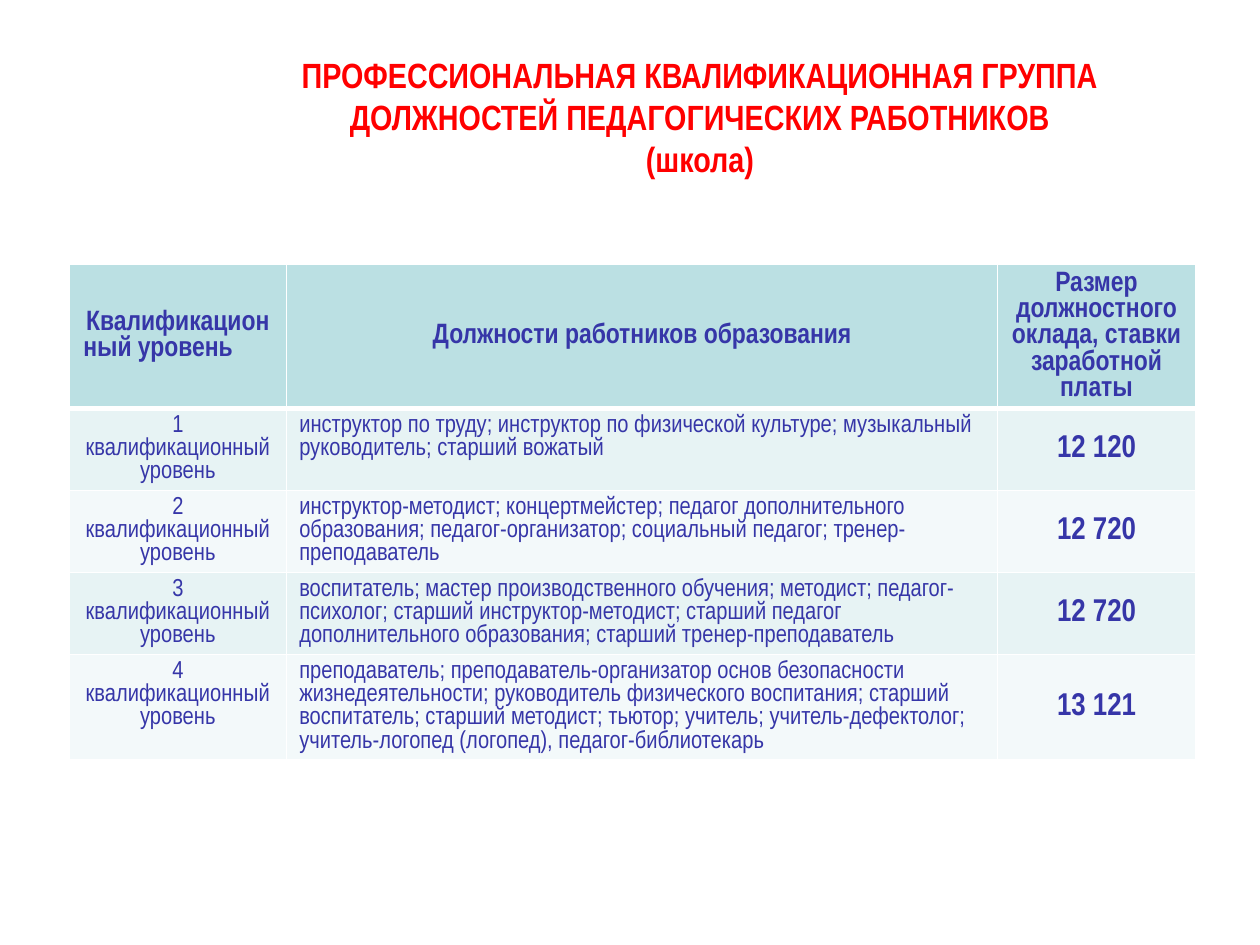
from dataclasses import dataclass

from lxml import etree
from pptx import Presentation
from pptx.dml.color import RGBColor
from pptx.enum.text import MSO_ANCHOR, MSO_AUTO_SIZE, PP_ALIGN
from pptx.oxml.ns import qn
from pptx.util import Cm, Pt

LEFT, MID = PP_ALIGN.LEFT, PP_ALIGN.CENTER
TOP, CENTER = MSO_ANCHOR.TOP, MSO_ANCHOR.MIDDLE
FIXED = MSO_AUTO_SIZE.NONE

FACE = "Arial Narrow"
RED, NAVY, WHITE = "FF0000", "3636A8", "FFFFFF"
HEAD_FILL, BANDS = "BBE0E3", ("E7F3F4", "F3F9FA")
WIDTHS = (4.39, 14.33, 3.99)
HEAD_HIGH = 2.9


@dataclass
class Style:
    size: int
    bold: bool
    align: PP_ALIGN = MID
    anchor: MSO_ANCHOR = CENTER
    color: str = NAVY


@dataclass
class Level:
    posts: str
    pay: str
    high: float = 1.65


TITLE = Style(20, True, color=RED)
HEAD = Style(16, True)
BODY = (Style(14, False, anchor=TOP),
        Style(14, False, LEFT, TOP),
        Style(18, True))

HEADS = ("Квалификационный уровень \t",
         "Должности работников образования",
         "Размер должностного оклада, ставки заработной платы")
LEVELS = (
    Level("инструктор по труду; инструктор по физической культуре; "
          "музыкальный руководитель; старший вожатый", "12 120"),
    Level("инструктор-методист; концертмейстер; педагог дополнительного "
          "образования; педагог-организатор; социальный педагог; "
          "тренер-преподаватель", "12 720"),
    Level("воспитатель; мастер производственного обучения; методист; "
          "педагог-психолог; старший инструктор-методист; старший педагог "
          "дополнительного образования; старший тренер-преподаватель",
          "12 720"),
    Level("преподаватель; преподаватель-организатор основ безопасности "
          "жизнедеятельности; руководитель физического воспитания; старший "
          "воспитатель; старший методист; тьютор; учитель; "
          "учитель-дефектолог; учитель-логопед (логопед), "
          "педагог-библиотекарь", "13 121", 2.1),
)


def tint(code: str) -> RGBColor:
    return RGBColor.from_string(code)


def write(frame, text: str, style: Style) -> None:
    frame.text = text
    para = frame.paragraphs[0]
    para.alignment, para.line_spacing = style.align, 1.0
    para.space_before = Pt(0)
    look = {"name": FACE, "size": Pt(style.size), "bold": style.bold}
    for run in para.runs:
        for key, value in look.items():
            setattr(run.font, key, value)
        run.font.color.rgb = tint(style.color)


def edge(cell, row: int) -> None:
    """White borders, with a thick rule between the head and the body."""
    props = cell._tc.get_or_add_tcPr()
    wide = {"lnL": 1, "lnR": 1,
            "lnT": 3 if row == 1 else 1, "lnB": 3 if row == 0 else 1}
    for tag, width in wide.items():
        line = etree.SubElement(props, qn(f"a:{tag}"), w=str(Pt(width)))
        solid = etree.SubElement(line, qn("a:solidFill"))
        etree.SubElement(solid, qn("a:srgbClr"), val=WHITE)


def draw_row(table, row: int, texts: tuple, styles: tuple, fill: str) -> None:
    for col, (text, style) in enumerate(zip(texts, styles)):
        cell = table.cell(row, col)
        write(cell.text_frame, text, style)
        cell.vertical_anchor = style.anchor
        edge(cell, row)
        cell.fill.solid()
        cell.fill.fore_color.rgb = tint(fill)


def main() -> None:
    deck = Presentation()
    deck.slide_width, deck.slide_height = Cm(25.4), Cm(19.05)
    slide = deck.slides.add_slide(deck.slide_layouts[5])

    # Title
    title = slide.shapes.title
    place = {"left": 4.09, "top": 0.76, "width": 20.04, "height": 3.18}
    for key, value in place.items():
        setattr(title, key, Cm(value))
    frame = title.text_frame
    write(frame, "ПРОФЕССИОНАЛЬНАЯ КВАЛИФИКАЦИОННАЯ ГРУППА ДОЛЖНОСТЕЙ "
          "ПЕДАГОГИЧЕСКИХ РАБОТНИКОВ\v(школа)", TITLE)
    frame.vertical_anchor, frame.auto_size = CENTER, FIXED
    frame.word_wrap = True

    # Pay table
    highs = [HEAD_HIGH] + [level.high for level in LEVELS]
    table = slide.shapes.add_table(
        len(highs), len(WIDTHS), Cm(1.39), Cm(5.33),
        Cm(sum(WIDTHS)), Cm(sum(highs))).table
    for col, width in zip(table.columns, WIDTHS):
        col.width = Cm(width)
    for row, high in zip(table.rows, highs):
        row.height = Cm(high)

    draw_row(table, 0, HEADS, (HEAD,) * len(HEADS), HEAD_FILL)
    for num, level in enumerate(LEVELS, 1):
        texts = (f"{num} квалификационный уровень", level.posts, level.pay)
        draw_row(table, num, texts, BODY, BANDS[(num - 1) % 2])

    deck.save("out.pptx")


if __name__ == "__main__":
    main()
